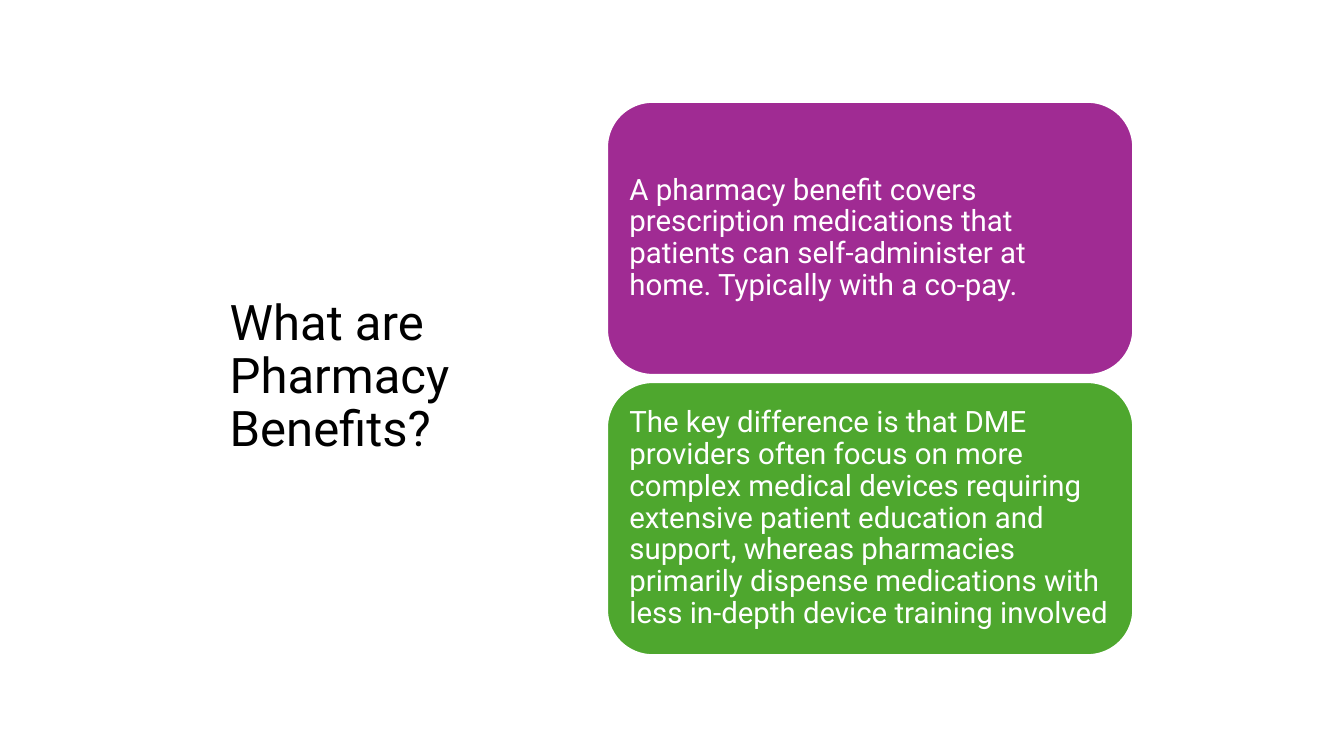
from pptx import Presentation
from pptx.dml.color import RGBColor
from pptx.enum.shapes import MSO_SHAPE
from pptx.enum.text import MSO_ANCHOR, PP_ALIGN
from pptx.util import Inches, Pt

BLACK = RGBColor(0x00, 0x00, 0x00)
WHITE = RGBColor(0xFF, 0xFF, 0xFF)
PURPLE = RGBColor(0xA0, 0x2B, 0x93)
GREEN = RGBColor(0x4E, 0xA7, 0x2E)

CARD_LEFT, CARD_TOP = 6.02, 1.01
CARD_WIDTH, CARD_HEIGHT = 5.22, 2.71
CARD_STEP = 2.78

CARDS = [
    (PURPLE, "A pharmacy benefit covers prescription medications that patients "
             "can self-administer at home. Typically with a co-pay."),
    (GREEN, "The key difference is that DME providers often focus on more complex "
            "medical devices requiring extensive patient education and support, "
            "whereas pharmacies primarily dispense medications with less in-depth "
            "device training involved"),
]


class SlideBuilder:
    """Holds the text style and the current slide."""

    font_name = "Roboto"
    line_spacing = 0.9

    def __init__(self, slide):
        self.slide = slide

    def set_text(self, shape, text, size, color):
        frame = shape.text_frame
        frame.word_wrap = True
        frame.vertical_anchor = MSO_ANCHOR.MIDDLE
        paragraph = frame.paragraphs[0]
        paragraph.text = text
        paragraph.alignment = PP_ALIGN.LEFT
        paragraph.line_spacing = self.line_spacing
        paragraph.font.name = self.font_name
        paragraph.font.size = Pt(size)
        paragraph.font.color.rgb = color
        return frame

    def title(self, text, left, top, width, height):
        box = self.slide.shapes.add_textbox(
            Inches(left), Inches(top), Inches(width), Inches(height))
        self.set_text(box, text, 35, BLACK)

    def card(self, text, fill, left, top, width, height):
        shape = self.slide.shapes.add_shape(
            MSO_SHAPE.ROUNDED_RECTANGLE,
            Inches(left), Inches(top), Inches(width), Inches(height))
        shape.shadow.inherit = False
        shape.fill.solid()
        shape.fill.fore_color.rgb = fill
        shape.line.color.rgb = WHITE
        shape.line.width = Pt(1.5)
        frame = self.set_text(shape, text, 21, WHITE)
        frame.margin_left = frame.margin_right = Inches(0.09)
        frame.margin_top = frame.margin_bottom = Inches(0.09)


def main():
    presentation = Presentation()
    presentation.slide_width = Inches(13.33)
    presentation.slide_height = Inches(7.5)
    slide = presentation.slides.add_slide(presentation.slide_layouts[6])
    builder = SlideBuilder(slide)

    # Title on the left
    builder.title("What are Pharmacy Benefits?", 2.18, 1.27, 2.96, 4.95)

    # Stacked cards on the right
    for index, (fill, text) in enumerate(CARDS):
        builder.card(text, fill, CARD_LEFT, CARD_TOP + index * CARD_STEP,
                     CARD_WIDTH, CARD_HEIGHT)

    presentation.save("out.pptx")


if __name__ == "__main__":
    main()
